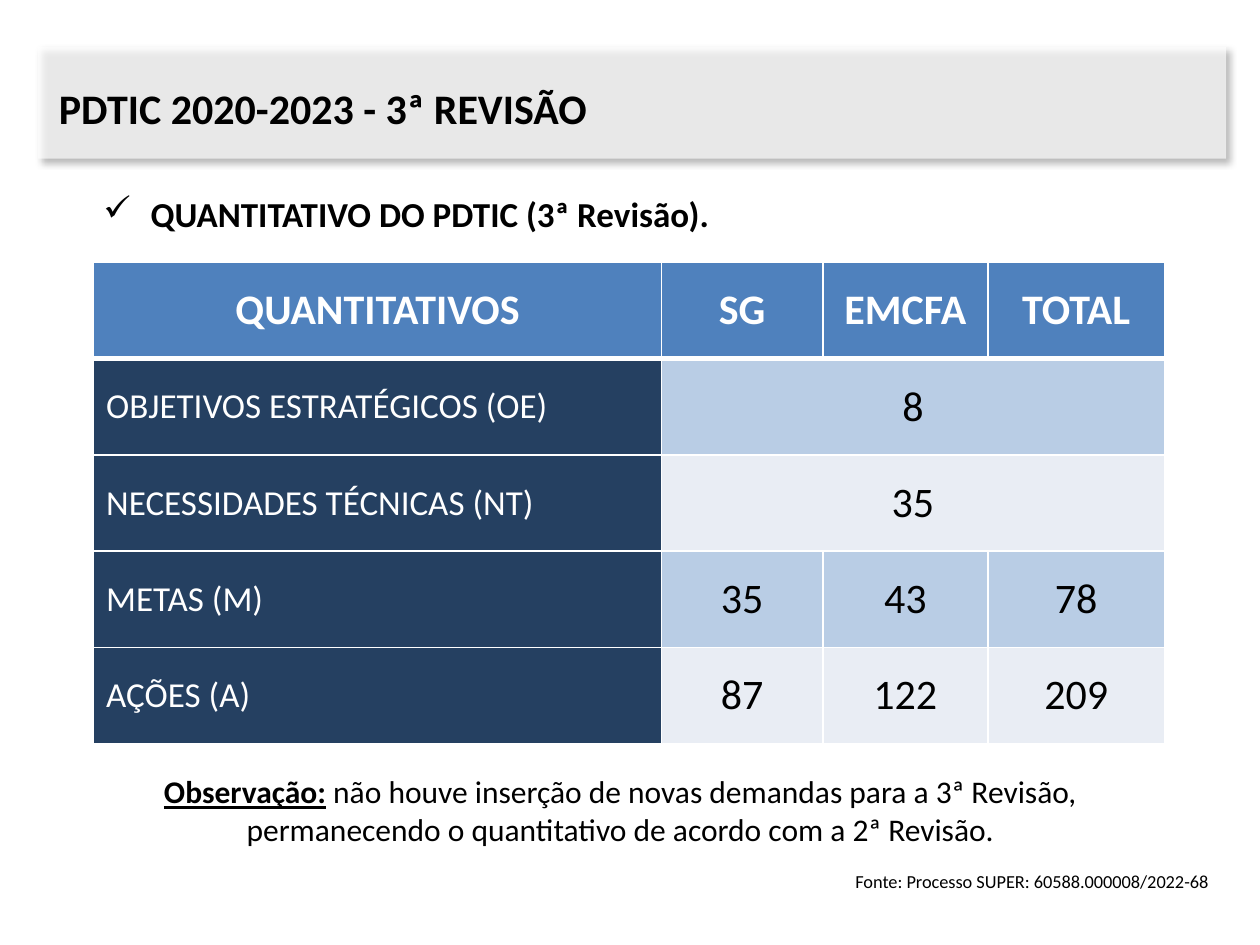
from lxml.etree import SubElement
from pptx import Presentation
from pptx.dml.color import RGBColor
from pptx.enum.shapes import MSO_SHAPE
from pptx.enum.text import MSO_ANCHOR, PP_ALIGN
from pptx.oxml.ns import qn
from pptx.util import Pt

TITLE = "PDTIC 2020-2023 - 3ª REVISÃO"
SUBTITLE = "QUANTITATIVO DO PDTIC (3ª Revisão)."
HEADERS = ["QUANTITATIVOS", "SG", "EMCFA", "TOTAL"]
ROWS = [
    ("OBJETIVOS ESTRATÉGICOS (OE)", ["8"]),
    ("NECESSIDADES TÉCNICAS (NT)", ["35"]),
    ("METAS (M)", ["35", "43", "78"]),
    ("AÇÕES (A)", ["87", "122", "209"]),
]
NOTE_LABEL = "Observação:"
NOTE = " não houve inserção de novas demandas para a 3ª Revisão, permanecendo o quantitativo de acordo com a 2ª Revisão."
SOURCE = "Fonte: Processo SUPER: 60588.000008/2022-68"

THEME = {
    "font": "Calibri",
    "text": "000000", "light": "FFFFFF",
    "header": "4F81BD", "label": "254061", "bands": ["B9CDE5", "E9EDF4"],
    "heading_size": 24, "label_size": 20, "note_size": 18, "source_size": 10.5,
}
COLUMN_WIDTHS = [324.5, 92.2, 94.4, 100.8]
ROW_HEIGHT = 55


def add_span(para, text, size, color="text", bold=False, underline=False):
    span = para.add_run()
    span.text = text
    font = span.font
    font.name, font.size = THEME["font"], Pt(size)
    font.bold, font.underline = bold, underline
    font.color.rgb = RGBColor.from_string(THEME[color])


def add_box(page, left, top, width, height, anchor=MSO_ANCHOR.MIDDLE):
    box = page.shapes.add_textbox(Pt(left), Pt(top), Pt(width), Pt(height))
    frame = box.text_frame
    frame.word_wrap = True
    frame.vertical_anchor = anchor
    return frame.paragraphs[0]


def set_indent(para, margin, indent):
    properties = para._p.get_or_add_pPr()
    properties.set("marL", str(Pt(margin)))
    properties.set("indent", str(Pt(indent)))
    return properties


def fill_cell(cell, text, fill, size, color, align, bold=False, bottom=1):
    properties = cell._tc.get_or_add_tcPr()
    for side, width in [("lnL", 1), ("lnR", 1), ("lnT", 1), ("lnB", bottom)]:
        line = SubElement(properties, qn(f"a:{side}"), w=str(Pt(width)))
        solid = SubElement(line, qn("a:solidFill"))
        SubElement(solid, qn("a:srgbClr"), val=THEME["light"])
    cell.fill.solid()
    cell.fill.fore_color.rgb = RGBColor.from_string(fill)
    cell.vertical_anchor = MSO_ANCHOR.MIDDLE
    para = cell.text_frame.paragraphs[0]
    para.alignment = align
    if text:
        add_span(para, text, size, color, bold)


def add_quantities(page):
    frame = page.shapes.add_table(
        len(ROWS) + 1, len(HEADERS), Pt(53.5), Pt(150),
        Pt(sum(COLUMN_WIDTHS)), Pt(ROW_HEIGHT * (len(ROWS) + 1)))
    table = frame.table
    for column, width in zip(table.columns, COLUMN_WIDTHS):
        column.width = Pt(width)
    for row in table.rows:
        row.height = Pt(ROW_HEIGHT)
    for index, header in enumerate(HEADERS):
        fill_cell(table.cell(0, index), header, THEME["header"],
                  THEME["heading_size"], "light", PP_ALIGN.CENTER, True, 3)
    for number, (label, values) in enumerate(ROWS, 1):
        fill_cell(table.cell(number, 0), label, THEME["label"],
                  THEME["label_size"], "light", PP_ALIGN.LEFT)
        band = THEME["bands"][(number - 1) % 2]
        padded = values + [""] * (len(HEADERS) - 1 - len(values))
        for index, value in enumerate(padded, 1):
            fill_cell(table.cell(number, index), value, band,
                      THEME["heading_size"], "text", PP_ALIGN.CENTER)
        if len(values) == 1:
            table.cell(number, 1).merge(table.cell(number, len(HEADERS) - 1))


def add_banner(page):
    banner = page.shapes.add_shape(
        MSO_SHAPE.ROUND_2_DIAG_RECTANGLE, Pt(21.6), Pt(26.7), Pt(679), Pt(64))
    banner.adjustments[0] = banner.adjustments[1] = 0
    banner.line.fill.background()
    banner.fill.solid()
    banner.fill.fore_color.rgb = RGBColor.from_string(THEME["light"])
    properties = banner._element.spPr
    color = properties.find(qn("a:solidFill")).find(qn("a:srgbClr"))
    SubElement(color, qn("a:alpha"), val="68000")
    effects = SubElement(properties, qn("a:effectLst"))
    shadow = SubElement(effects, qn("a:outerShdw"), blurRad=str(Pt(4)),
                        dist=str(Pt(3)), dir="2700000", algn="tl", rotWithShape="0")
    shade = SubElement(shadow, qn("a:srgbClr"), val=THEME["text"])
    SubElement(shade, qn("a:alpha"), val="40000")


def main():
    deck = Presentation()
    deck.slide_width, deck.slide_height = Pt(720), Pt(540)
    page = deck.slides.add_slide(deck.slide_layouts[6])

    source = add_box(page, 445.7, 494, 255.6, 20, MSO_ANCHOR.TOP)
    set_indent(source, 36, 0)
    source.alignment = PP_ALIGN.JUSTIFY
    add_span(source, SOURCE, THEME["source_size"])

    subtitle = add_box(page, 52, 101, 657, 42.5)
    SubElement(set_indent(subtitle, 27, -27), qn("a:buChar"), char="✓")
    add_span(subtitle, SUBTITLE, THEME["label_size"], bold=True)

    add_quantities(page)
    add_banner(page)

    title = add_box(page, 26.6, 40.5, 686, 42.5)
    add_span(title, TITLE, THEME["heading_size"], bold=True)

    note = add_box(page, 48.2, 437.8, 612.7, 51, MSO_ANCHOR.TOP)
    note.alignment = PP_ALIGN.CENTER
    add_span(note, NOTE_LABEL, THEME["note_size"], bold=True, underline=True)
    add_span(note, NOTE, THEME["note_size"])

    deck.save("out.pptx")


if __name__ == "__main__":
    main()
